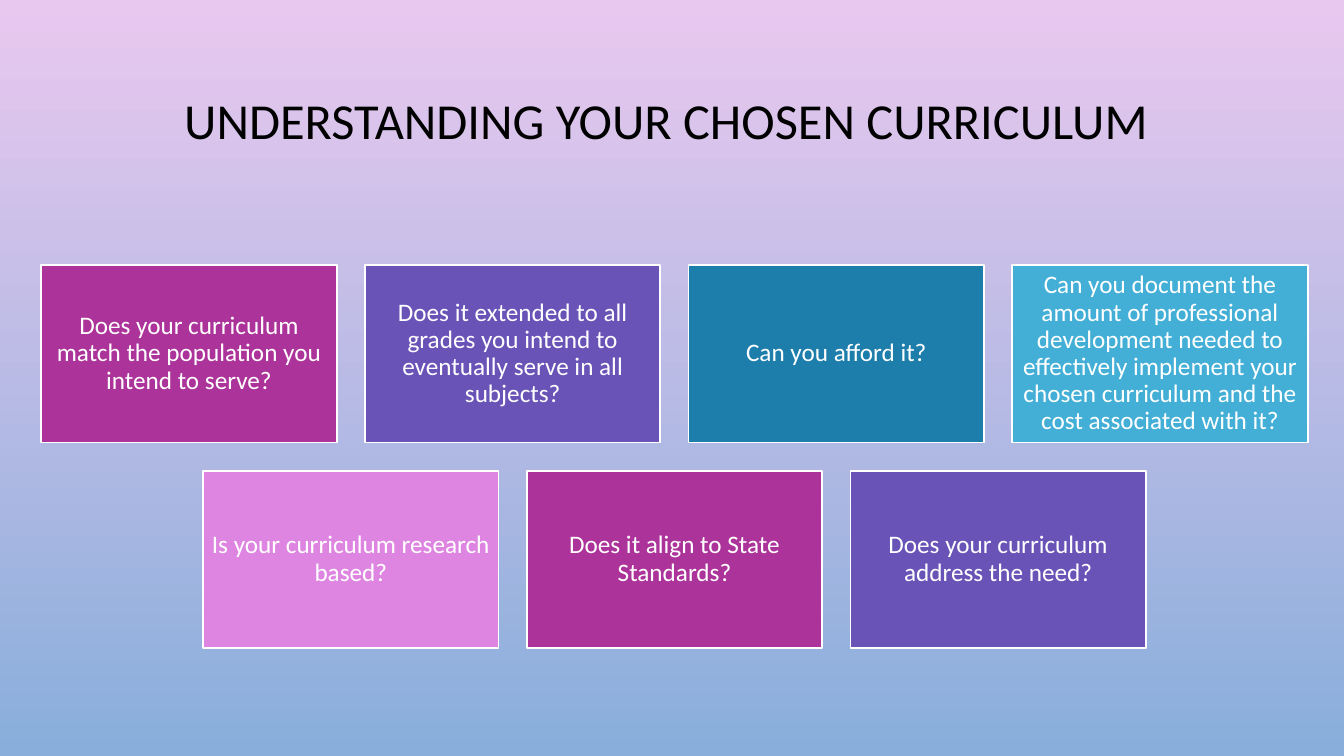
from pptx import Presentation
from pptx.dml.color import RGBColor
from pptx.enum.shapes import MSO_SHAPE
from pptx.enum.text import MSO_ANCHOR, PP_ALIGN
from pptx.util import Inches, Pt

THEME = {
    "font": "Calibri",
    "title_size": Pt(36),
    "card_size": Pt(18),
    "outline": Pt(1.25),
    "background": ("E9C8EF", "89AEDB"),
    "black": "000000",
    "white": "FFFFFF",
    "magenta": "AC339A",
    "violet": "6953B7",
    "teal": "1D7EAB",
    "sky": "43AFD6",
    "pink": "DE85E1",
}

QUESTION_ROWS = [
    [
        ("Does your curriculum match the population you intend to serve?", "magenta"),
        ("Does it extended to all grades you intend to eventually serve in all subjects?", "violet"),
        ("Can you afford it?", "teal"),
        ("Can you document the amount of professional development needed to effectively "
         "implement your chosen curriculum and the cost associated with it?", "sky"),
    ],
    [
        ("Is your curriculum research based?", "pink"),
        ("Does it align to State Standards?", "magenta"),
        ("Does your curriculum address the need?", "violet"),
    ],
]


def color(name):
    return RGBColor.from_string(THEME[name])


def write_centred(box, text, size, color_name):
    frame = box.text_frame
    frame.word_wrap = True
    frame.vertical_anchor = MSO_ANCHOR.MIDDLE
    para = frame.paragraphs[0]
    para.alignment = PP_ALIGN.CENTER
    para.line_spacing = 0.9
    span = para.add_run()
    span.text = text
    for name, value in {"name": THEME["font"], "size": size}.items():
        setattr(span.font, name, value)
    span.font.color.rgb = color(color_name)


deck = Presentation()
deck.slide_width, deck.slide_height = Inches(13.33), Inches(7.5)
page = deck.slides.add_slide(deck.slide_layouts[6])

# Background, shaded from top to bottom
backdrop = page.background.fill
backdrop.gradient()
backdrop.gradient_angle = 270
for stop, shade in zip(backdrop.gradient_stops, THEME["background"]):
    stop.color.rgb = RGBColor.from_string(shade)

# Title
title = page.shapes.add_textbox(Inches(1), Inches(0.35), Inches(11.33), Inches(1.75))
write_centred(title, "UNDERSTANDING YOUR CHOSEN CURRICULUM ", THEME["title_size"], "black")

# Question cards, each row centred on the same axis
card_width, card_height, gap = Inches(2.93), Inches(1.76), Inches(0.28)
axis, first_top = Inches(6.69), Inches(2.63)
for row_index, questions in enumerate(QUESTION_ROWS):
    row_width = len(questions) * (card_width + gap) - gap
    row_left = axis - row_width // 2
    top = first_top + row_index * (card_height + gap)
    for column, (question, fill_name) in enumerate(questions):
        left = row_left + column * (card_width + gap)
        card = page.shapes.add_shape(MSO_SHAPE.RECTANGLE, left, top, card_width, card_height)
        card.shadow.inherit = False
        card.fill.solid()
        card.fill.fore_color.rgb = color(fill_name)
        card.line.color.rgb = color("white")
        card.line.width = THEME["outline"]
        for side in ("left", "top", "right", "bottom"):
            setattr(card.text_frame, f"margin_{side}", Inches(0.07))
        write_centred(card, question, THEME["card_size"], "white")

deck.save("out.pptx")
